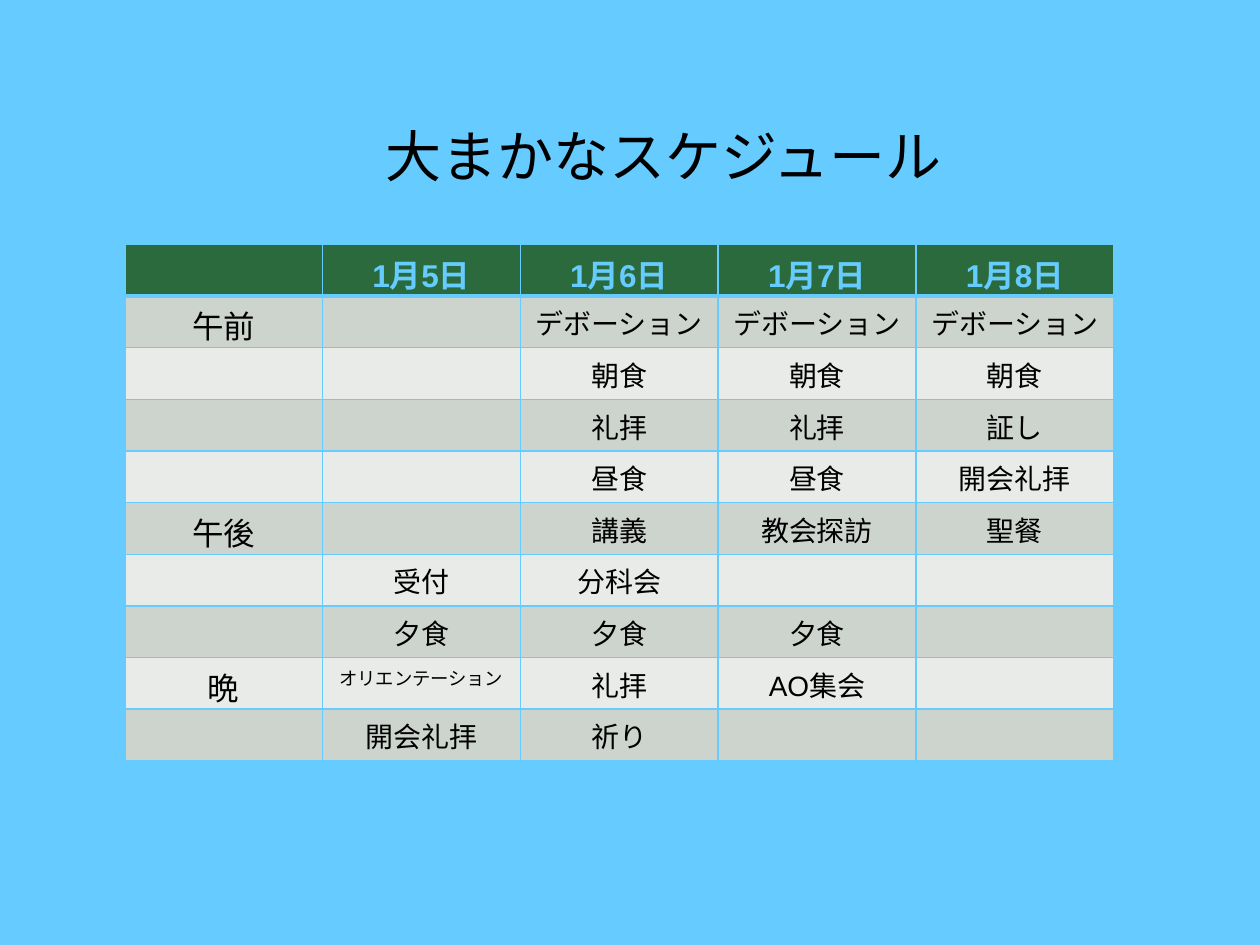
"""Build the rough camp schedule slide with its five-column timetable."""
from lxml import etree
from pptx import Presentation
from pptx.dml.color import RGBColor
from pptx.enum.text import MSO_ANCHOR, PP_ALIGN
from pptx.oxml.ns import qn
from pptx.util import Inches, Pt

CENTER, BOTTOM = PP_ALIGN.CENTER, MSO_ANCHOR.BOTTOM

THEME = {
    "sky": "66CCFF", "header": "2B6A3D", "bands": ("CDD4CE", "E8EBE8"), "ink": "000000",
    "title_font": "Quicksand", "table_font": "Arial",
    "title": 32, "label": 18, "entry": 16, "small": 10.5, "line": 1, "heavy_line": 3,
}
SMALL_ENTRY = "オリエンテーション"
SCHEDULE = [
    ["", "1月5日", "1月6日", "1月7日", "1月8日"],
    ["午前", "", "デボーション", "デボーション", "デボーション"],
    ["", "", "朝食", "朝食", "朝食"],
    ["", "", "礼拝", "礼拝", "証し"],
    ["", "", "昼食", "昼食", "開会礼拝"],
    ["午後", "", "講義", "教会探訪", "聖餐"],
    ["", "受付", "分科会", "", ""],
    ["", "夕食", "夕食", "夕食", ""],
    ["晩", SMALL_ENTRY, "礼拝", "AO集会", ""],
    ["", "開会礼拝", "祈り", "", ""],
]


def write(p, text, name, size, color, bold=False):
    r = p.add_run()
    r.text = text
    for key, value in {"name": name, "size": Pt(size), "bold": bold}.items():
        setattr(r.font, key, value)
    r.font.color.rgb = RGBColor.from_string(color)


def add_border(cell, side, points):
    tc_pr = cell._tc.get_or_add_tcPr()
    ln = etree.Element(qn(f"a:{side}"), w=str(Pt(points)))
    fill = etree.SubElement(ln, qn("a:solidFill"))
    etree.SubElement(fill, qn("a:srgbClr"), val=THEME["sky"])
    tc_pr.append(ln)


prs = Presentation()
prs.slide_width, prs.slide_height = Inches(10), Inches(7.5)
s = prs.slides.add_slide(prs.slide_layouts[6])
s.background.fill.solid()
s.background.fill.fore_color.rgb = RGBColor.from_string(THEME["sky"])

tf = s.shapes.add_textbox(Inches(2.96), Inches(0.3), Inches(6.91), Inches(1.25)).text_frame
for key, value in {"word_wrap": True, "vertical_anchor": BOTTOM}.items():
    setattr(tf, key, value)
write(tf.paragraphs[0], "大まかなスケジュール", THEME["title_font"], THEME["title"], THEME["ink"])

rows, cols = len(SCHEDULE), len(SCHEDULE[0])
col_width, row_height = Inches(1.57), Inches(0.41)
table = s.shapes.add_table(rows, cols, Inches(0.99), Inches(1.94),
                           col_width * cols, row_height * rows).table
for column in table.columns:
    column.width = col_width
for row in table.rows:
    row.height = row_height

for i, entries in enumerate(SCHEDULE):
    is_header = i == 0
    fill = THEME["header"] if is_header else THEME["bands"][(i - 1) % 2]
    borders = {
        "lnL": THEME["line"], "lnR": THEME["line"],
        "lnT": THEME["heavy_line" if i == 1 else "line"],
        "lnB": THEME["heavy_line" if is_header else "line"],
    }
    for j, text in enumerate(entries):
        cell = table.cell(i, j)
        for side, points in borders.items():
            add_border(cell, side, points)
        cell.fill.solid()
        cell.fill.fore_color.rgb = RGBColor.from_string(fill)
        p = cell.text_frame.paragraphs[0]
        p.alignment = CENTER
        if text:
            role = "label" if is_header or j == 0 else "small" if text == SMALL_ENTRY else "entry"
            write(p, text, THEME["table_font"], THEME[role],
                  THEME["sky" if is_header else "ink"], is_header)

prs.save("out.pptx")
